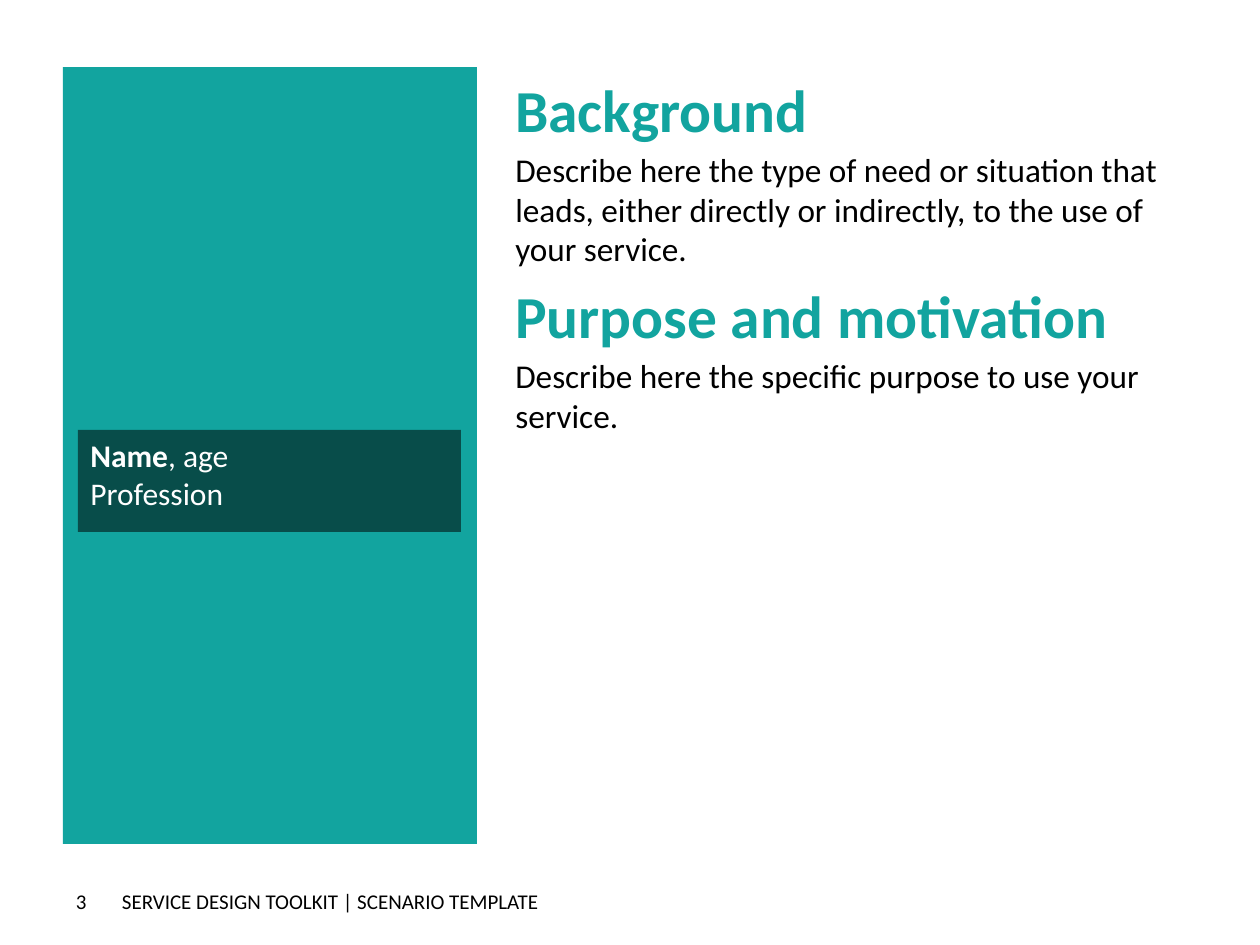
import pptx
import pptx.util
import pptx.dml.color
import pptx.enum.shapes
import pptx.enum.text
import pptx.oxml

PX = 914400 // 126
HUES = {"teal": "12A49F", "black": "000000", "white": "FFFFFF"}
RECT = pptx.enum.shapes.MSO_SHAPE.RECTANGLE
ALIGN = pptx.enum.text.PP_ALIGN
ANCHOR = pptx.enum.text.MSO_ANCHOR

deck = pptx.Presentation()
deck.slide_width = pptx.util.Inches(10)
deck.slide_height = pptx.util.Inches(7.5)
slide = deck.slides.add_slide(deck.slide_layouts[6])


def add_box(spot, hue=None):
    left, top, width, height = [n * PX for n in spot]
    if hue:
        box = slide.shapes.add_shape(RECT, left, top, width, height)
        box.shadow.inherit = False
        box.fill.solid()
        box.fill.fore_color.rgb = pptx.dml.color.RGBColor.from_string(HUES[hue])
        box.line.fill.background()
    else:
        box = slide.shapes.add_textbox(left, top, width, height)
    box.text_frame.word_wrap = True
    box.text_frame.vertical_anchor = ANCHOR.TOP
    return box


def add_run(para, text, size, hue, bold=False):
    para.alignment = ALIGN.LEFT
    run = para.add_run()
    run.text = text
    run.font.name = "Calibri"
    run.font.size = pptx.util.Pt(size)
    run.font.bold = bold
    run.font.color.rgb = pptx.dml.color.RGBColor.from_string(HUES[hue])


panel = add_box((63, 67, 414, 777), "teal")

story = add_box((503, 67, 694, 777)).text_frame
parts = [
    ("Background", "Describe here the type of need or situation that leads, "
     "either directly or indirectly, to the use of your service.", 1.5),
    ("Purpose and motivation",
     "Describe here the specific purpose to use your service.", 6),
]
for i, (head, body, gap) in enumerate(parts):
    para = story.add_paragraph() if i else story.paragraphs[0]
    para.space_before = pptx.util.Pt(gap)
    add_run(para, head, 34, "teal", True)
    para = story.add_paragraph()
    para.space_before = pptx.util.Pt(2.5)
    add_run(para, body, 19, "black")

card = add_box((78, 430, 383, 102), "black")
tint = card.fill._xPr.find(".//" + pptx.oxml.ns.qn("a:srgbClr"))
alpha = pptx.oxml.parse_xml(
    '<a:alpha xmlns:a="http://schemas.openxmlformats.org/drawingml/2006/main" val="53000"/>')
tint.append(alpha)
name = card.text_frame.paragraphs[0]
add_run(name, "Name", 18, "white", True)
add_run(name, ", age", 18, "white")
add_run(card.text_frame.add_paragraph(), "Profession", 18, "white")

footer = [
    ("3", (63, 876, 77, 50), 13),
    ("SERVICE DESIGN TOOLKIT | SCENARIO TEMPLATE", (122, 876, 1075, 50), 0),
]
for text, spot, inset in footer:
    frame = add_box(spot).text_frame
    frame.margin_left = inset * PX
    frame.vertical_anchor = ANCHOR.MIDDLE
    add_run(frame.paragraphs[0], text, 12, "black")

deck.save("out.pptx")
